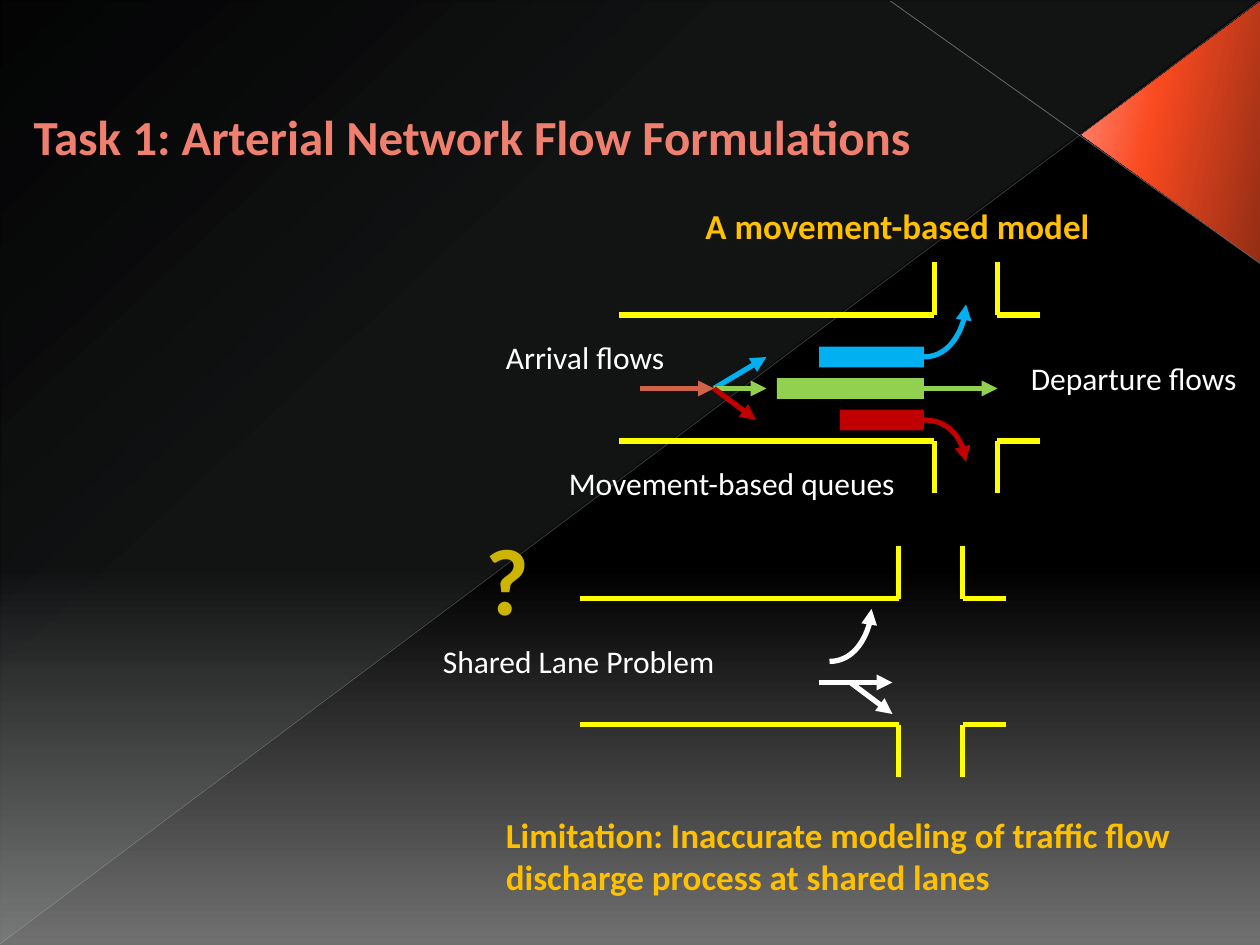
from dataclasses import dataclass

from lxml.etree import SubElement
from pptx import Presentation
from pptx.dml.color import RGBColor
from pptx.enum.shapes import MSO_CONNECTOR, MSO_SHAPE
from pptx.enum.text import MSO_ANCHOR, PP_ALIGN
from pptx.oxml.ns import qn
from pptx.util import Inches, Pt

COLUMNS, ROWS = 120, 90  # square grid cells, twelve to the inch


@dataclass(frozen=True)
class Theme:
    font: str = "Calibri"
    title_size: int = 28
    heading_size: int = 20
    label_size: int = 18
    mark_size: int = 54
    line_width: float = 3
    title: str = "EF7F6E"
    heading: str = "FFC000"
    text_outline: str = "914533"
    mark: str = "CCB400"
    white: str = "FFFFFF"
    road: str = "FFFF00"
    arrival: str = "D16349"
    left_turn: str = "00B0F0"
    through: str = "92D050"
    right_turn: str = "C00000"
    long_rule: str = "BABECD"
    short_rule: str = "C2C5D2"
    backdrop: tuple = ((0, "000000", 100), (60, "000000", 100), (100, "707070", 100))
    sheen: tuple = ((0, "C5D1D7", 10), (70, "C5D1D7", 8), (100, "C5D1D7", 1))
    corner: tuple = ((0, "922D15", 100), (60, "FA4A20", 100), (100, "FF9081", 100))


def add_colour(parent, colour, opacity=100):
    element = SubElement(parent, qn("a:srgbClr"), val=colour)
    if opacity < 100:
        SubElement(element, qn("a:alpha"), val=str(opacity * 1000))


def set_gradient(fill, owner, stops, angle):
    """Fill with (position, colour, opacity) stops; angle runs clockwise."""
    fill.gradient()
    fill.gradient_angle = 360 - angle
    stop_list = next(owner.iter(qn("a:gsLst")))
    for old_stop in list(stop_list):
        stop_list.remove(old_stop)
    for position, colour, opacity in stops:
        stop = SubElement(stop_list, qn("a:gs"), pos=str(position * 1000))
        add_colour(stop, colour, opacity)


class SlideBuilder:
    """Holds the theme and the slide; places are given in grid columns and rows."""

    def __init__(self, presentation, theme):
        self.theme = theme
        self.slide = presentation.slides.add_slide(presentation.slide_layouts[5])
        self.cell_width = presentation.slide_width / COLUMNS
        self.cell_height = presentation.slide_height / ROWS

    def x(self, column):
        return round(column * self.cell_width)

    def y(self, row):
        return round(row * self.cell_height)

    def box(self, column, row, width, height):
        return self.x(column), self.y(row), self.x(width), self.y(height)

    def background(self, stops, angle):
        set_gradient(self.slide.background.fill, self.slide.element, stops, angle)

    def block(self, kind, place, colour=None):
        shape = self.slide.shapes.add_shape(kind, *self.box(*place))
        shape.shadow.inherit = False
        shape.line.fill.background()
        if colour:
            shape.fill.solid()
            shape.fill.fore_color.rgb = RGBColor.from_string(colour)
        return shape

    def flipped_triangle(self, kind, place, stops, angle, rotation=0):
        shape = self.block(kind, place)
        shape.rotation = rotation
        next(shape.element.iter(qn("a:xfrm"))).set("flipV", "1")
        set_gradient(shape.fill, shape.element, stops, angle)
        return shape

    def line(self, start, end, colour, width=None, opacity=100, arrow=False,
             curved=False, source=None):
        """Draw a connector; source is a block whose right side it leaves from."""
        kind = MSO_CONNECTOR.CURVE if curved else MSO_CONNECTOR.STRAIGHT
        connector = self.slide.shapes.add_connector(
            kind, self.x(start[0]), self.y(start[1]), self.x(end[0]), self.y(end[1]))
        if source is not None:
            connector.begin_connect(source, 3)
        properties = connector.element.find(qn("p:spPr"))
        if curved:  # a single quarter bend
            properties.find(qn("a:prstGeom")).set("prst", "curvedConnector2")
        connector.line.width = Pt(width or self.theme.line_width)
        line = properties.find(qn("a:ln"))
        add_colour(SubElement(line, qn("a:solidFill")), colour, opacity)
        if arrow:
            SubElement(line, qn("a:tailEnd"), type="triangle")
        SubElement(properties, qn("a:effectLst"))

    def arrow(self, start, end, colour, **options):
        self.line(start, end, colour, arrow=True, **options)

    def add_text(self, shape, text, size, colour, bold=False, outline=None):
        """Add one run to the shape and return its paragraph."""
        paragraph = shape.text_frame.paragraphs[0]
        run = paragraph.add_run()
        run.text = text
        run.font.name = self.theme.font
        run.font.size = Pt(size)
        run.font.bold = bold
        run.font.color.rgb = RGBColor.from_string(colour)
        if outline:
            outline_colour, width = outline
            properties = next(shape.element.iter(qn("a:rPr")))
            line = SubElement(properties, qn("a:ln"), w=str(int(Pt(width))))
            add_colour(SubElement(line, qn("a:solidFill")), outline_colour)
            properties.insert(0, line)
        return paragraph

    def title(self, text, place):
        shape = self.slide.shapes.title
        shape.left, shape.top, shape.width, shape.height = self.box(*place)
        shape.element.getparent().append(shape.element)  # in front of the backdrop
        shape.text_frame.vertical_anchor = MSO_ANCHOR.MIDDLE
        paragraph = self.add_text(shape, text, self.theme.title_size, self.theme.title,
                                  True, (self.theme.text_outline, 0.5))
        paragraph.alignment = PP_ALIGN.LEFT

    def text_box(self, place, wrap=True):
        shape = self.slide.shapes.add_textbox(*self.box(*place))
        shape.text_frame.word_wrap = wrap
        return shape

    def heading(self, text, place):
        shape = self.text_box(place)
        shape.text_frame.vertical_anchor = MSO_ANCHOR.MIDDLE
        self.add_text(shape, text, self.theme.heading_size, self.theme.heading,
                      True, (self.theme.text_outline, 0.5))

    def label(self, text, column, row, width):
        shape = self.text_box((column, row, width, 4.4))
        paragraph = self.add_text(shape, text, self.theme.label_size, self.theme.white)
        paragraph.line_spacing = 0.9

    def mark(self, text, place):
        shape = self.text_box(place, wrap=False)
        paragraph = self.add_text(shape, text, self.theme.mark_size, self.theme.mark,
                                  True, (self.theme.mark, 1.42))
        paragraph.alignment = PP_ALIGN.CENTER

    def intersection(self, left, near, far, right, top):
        """Road edges of a main street 12 rows wide, crossed between near and far."""
        for row, side in ((top, -5), (top + 12, 5)):
            self.line((left, row), (near, row), self.theme.road)
            self.line((far, row), (right, row), self.theme.road)
            for column in (near, far):
                self.line((column, row), (column, row + side), self.theme.road)


def main():
    presentation = Presentation()
    presentation.slide_width, presentation.slide_height = Inches(10), Inches(7.5)
    theme = Theme()
    builder = SlideBuilder(presentation, theme)

    builder.background(theme.backdrop, 90)
    builder.flipped_triangle(MSO_SHAPE.RIGHT_TRIANGLE, (0.1, 0.1, 119.8, 89.8),
                             theme.sheen, 133)
    corner = builder.flipped_triangle(MSO_SHAPE.ISOSCELES_TRIANGLE, (99.1, 4.1, 24.9, 17),
                                      theme.corner, 258, rotation=90)
    corner.adjustments[0] = 0.51
    builder.line((120, 25.1), (84.8, 0.1), theme.short_rule, 0.47, 45)
    builder.line((0, 89.9), (119.9, 0.1), theme.long_rule, 0.39, 35)

    builder.title("Task 1: Arterial Network Flow Formulations", (2, 4, 100, 17.9))
    builder.heading("Limitation: Inaccurate modeling of traffic flow discharge process "
                    "at shared lanes", (47, 77, 70, 9))
    builder.heading("A movement-based model", (66, 17, 40, 9))

    builder.intersection(59, 89, 95, 99, 30)
    builder.label("Departure flows", 97, 34, 23)
    builder.label("Movement-based queues", 53, 44, 35)
    builder.label("Arrival flows", 47, 32, 18)
    split = (68, 37)
    builder.arrow((61, 37), split, theme.arrival)
    movements = (  # colour, queue length, queue row, arrival end, departure end
        (theme.left_turn, 10, 34, (73, 34), (92, 29)),
        (theme.through, 14, 37, (73, 37), (95, 37)),
        (theme.right_turn, 8, 40, (72, 40), (92, 44)),
    )
    for colour, length, row, arrival_end, departure_end in movements:
        queue = builder.block(MSO_SHAPE.RECTANGLE, (88 - length, row - 1, length, 2), colour)
        builder.arrow(split, arrival_end, colour)
        builder.arrow((88, row), departure_end, colour,
                      curved=departure_end[1] != row, source=queue)

    builder.mark("?", (45, 49, 6.6, 12.1))
    builder.intersection(55.2, 85.6, 91.7, 95.8, 57)
    builder.label("Shared Lane Problem", 41, 61, 35.5)
    builder.arrow((81, 65), (85, 68), theme.white)
    builder.arrow((79, 63), (83, 58), theme.white, curved=True)
    builder.arrow((78, 65), (85, 65), theme.white)

    presentation.save("out.pptx")


if __name__ == "__main__":
    main()
